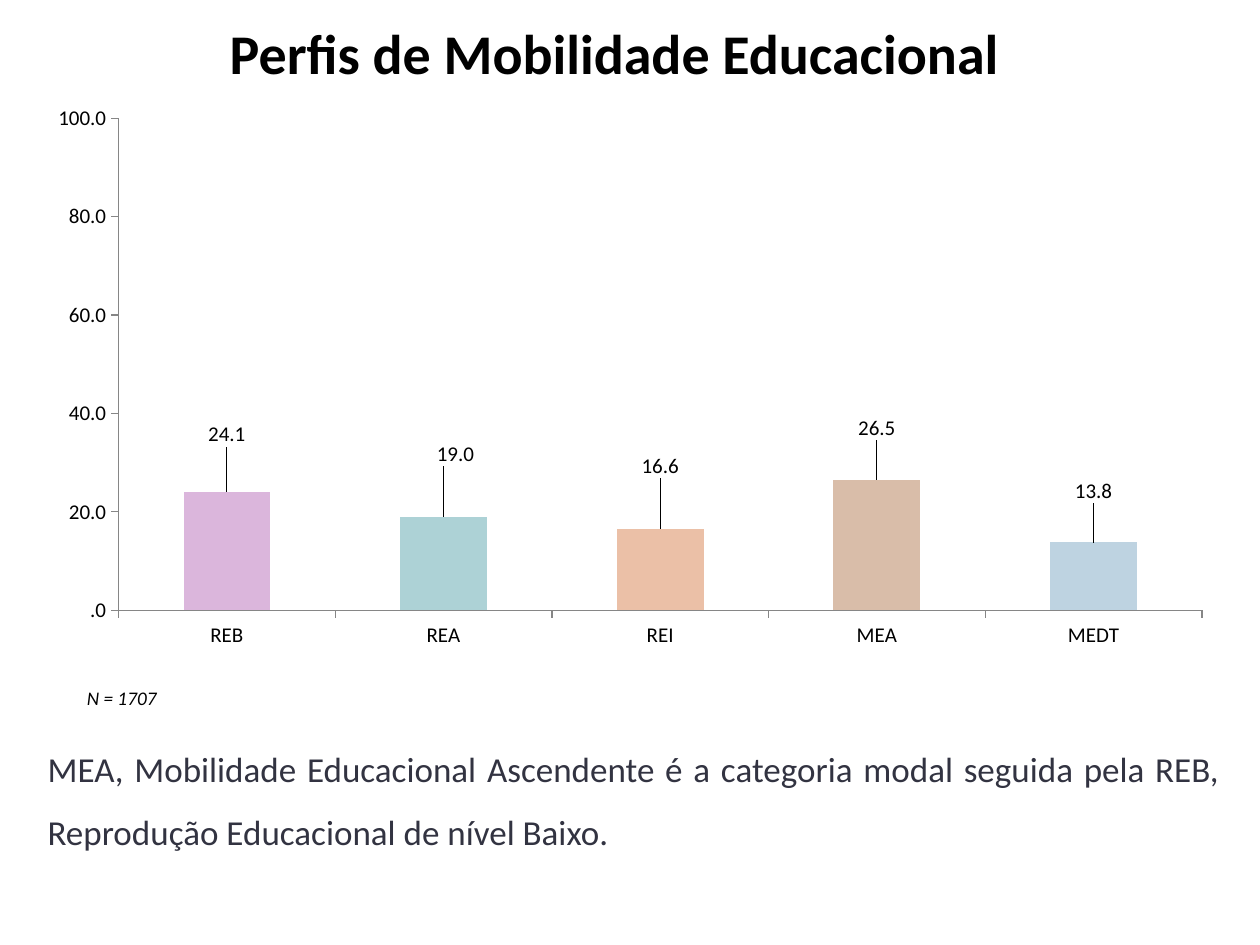
from lxml import etree
from pptx import Presentation
from pptx.chart.data import CategoryChartData
from pptx.dml.color import RGBColor
from pptx.enum.chart import XL_CHART_TYPE, XL_LABEL_POSITION, XL_TICK_MARK
from pptx.enum.text import MSO_ANCHOR, PP_ALIGN
from pptx.oxml.ns import qn
from pptx.util import Cm, Pt

NUMBER_FORMAT = "####.0"
# category, percentage, bar colour, label shift as a share of the chart (x, y)
PROFILES = [
    ("REB", 24.1, "DBB6DC", (0, -0.07)),
    ("REA", 19.0, "ADD2D6", (0.01, -0.08)),
    ("REI", 16.6, "EBC0A7", (0, -0.08)),
    ("MEA", 26.5, "D9BDA9", (0, -0.06)),
    ("MEDT", 13.8, "BED3E1", (0, -0.06)),
]


def color(hex_value):
    return RGBColor.from_string(hex_value)


def set_font(font, size, hex_value="000000", **formats):
    font.color.rgb = color(hex_value)
    for name, value in {"name": "Calibri", "size": Pt(size), **formats}.items():
        setattr(font, name, value)


def add_text(slide, box, text, size, hex_value="000000", anchor=MSO_ANCHOR.TOP,
             paragraph_format=None, **font_formats):
    frame = slide.shapes.add_textbox(*map(Cm, box)).text_frame
    frame.word_wrap = True
    frame.vertical_anchor = anchor
    paragraph = frame.paragraphs[0]
    for name, value in (paragraph_format or {}).items():
        setattr(paragraph, name, value)
    run = paragraph.add_run()
    run.text = text
    set_font(run.font, size, hex_value, **font_formats)


def manual_layout(**values):
    """Return a c:layout element holding the given children in order."""
    layout = etree.Element(qn("c:layout"))
    manual = etree.SubElement(layout, qn("c:manualLayout"))
    for name, value in values.items():
        etree.SubElement(manual, qn(f"c:{name}")).set("val", str(value))
    return layout


def style_axis(axis):
    formats = {"has_major_gridlines": False, "major_tick_mark": XL_TICK_MARK.OUTSIDE,
               "minor_tick_mark": XL_TICK_MARK.NONE}
    for name, value in formats.items():
        setattr(axis, name, value)
    axis.format.line.color.rgb = color("868686")
    axis.format.line.width = Pt(0.75)
    set_font(axis.tick_labels.font, 12)


def style_labels(labels):
    for name, value in {"show_value": True, "number_format": NUMBER_FORMAT,
                        "number_format_is_linked": False,
                        "position": XL_LABEL_POSITION.OUTSIDE_END}.items():
        setattr(labels, name, value)
    set_font(labels.font, 12)


def shift_label(point, series, index, shift):
    """Move one value label away from its usual place above the bar."""
    label = point.data_label
    label.position = XL_LABEL_POSITION.OUTSIDE_END
    set_font(label.font, 12)
    element = series.data_labels._element.findall(qn("c:dLbl"))[index]
    number_format = etree.Element(qn("c:numFmt"), formatCode=NUMBER_FORMAT, sourceLinked="0")
    element.insert(1, manual_layout(x=shift[0], y=shift[1]))
    element.insert(2, number_format)


def add_profile_chart(slide, box):
    data = CategoryChartData(number_format=NUMBER_FORMAT)
    data.categories = [profile[0] for profile in PROFILES]
    data.add_series("Series 1", [profile[1] for profile in PROFILES])
    chart = slide.shapes.add_chart(XL_CHART_TYPE.COLUMN_CLUSTERED, *map(Cm, box), data).chart
    chart.has_legend = False
    chart.has_title = False
    set_font(chart.font, 10)

    style_axis(chart.category_axis)
    style_axis(chart.value_axis)
    for name, value in {"minimum_scale": 0, "maximum_scale": 100, "major_unit": 20}.items():
        setattr(chart.value_axis, name, value)
    chart.value_axis.tick_labels.number_format = NUMBER_FORMAT
    chart.value_axis.tick_labels.number_format_is_linked = False

    plot = chart.plots[0]
    plot.gap_width = 150
    plot.vary_by_categories = False
    series = plot.series[0]
    series.format.fill.solid()
    series.format.fill.fore_color.rgb = color("53548A")
    style_labels(series.data_labels)
    for index, (_, _, bar_color, shift) in enumerate(PROFILES):
        point = series.points[index]
        point.format.fill.solid()
        point.format.fill.fore_color.rgb = color(bar_color)
        shift_label(point, series, index, shift)

    plot_area = chart._chartSpace.chart.plotArea
    for layout in plot_area.findall(qn("c:layout")):
        plot_area.remove(layout)
    plot_area.insert(0, manual_layout(layoutTarget="inner", xMode="edge", yMode="edge",
                                      x=0.07, y=0.04, w=0.91, h=0.87))


def main():
    presentation = Presentation()
    presentation.slide_width, presentation.slide_height = Cm(25.4), Cm(19.05)
    slide = presentation.slides.add_slide(presentation.slide_layouts[6])
    add_text(slide, (1.09, 0, 22.86, 2.11), "Perfis de Mobilidade Educacional ", 32,
             anchor=MSO_ANCHOR.MIDDLE, paragraph_format={"alignment": PP_ALIGN.CENTER}, bold=True)
    add_profile_chart(slide, (0.71, 1.93, 24, 11.4))
    add_text(slide, (1.5, 13.72, 2.36, 0.74), "N = 1707", 11, italic=True)
    add_text(slide, (0.71, 14.53, 24.13, 2.82),
             "MEA, Mobilidade Educacional Ascendente é a categoria modal seguida pela REB, "
             "Reprodução Educacional de nível Baixo.", 20, "323341",
             paragraph_format={"alignment": PP_ALIGN.JUSTIFY, "line_spacing": 1.5})
    presentation.save("out.pptx")


if __name__ == "__main__":
    main()
